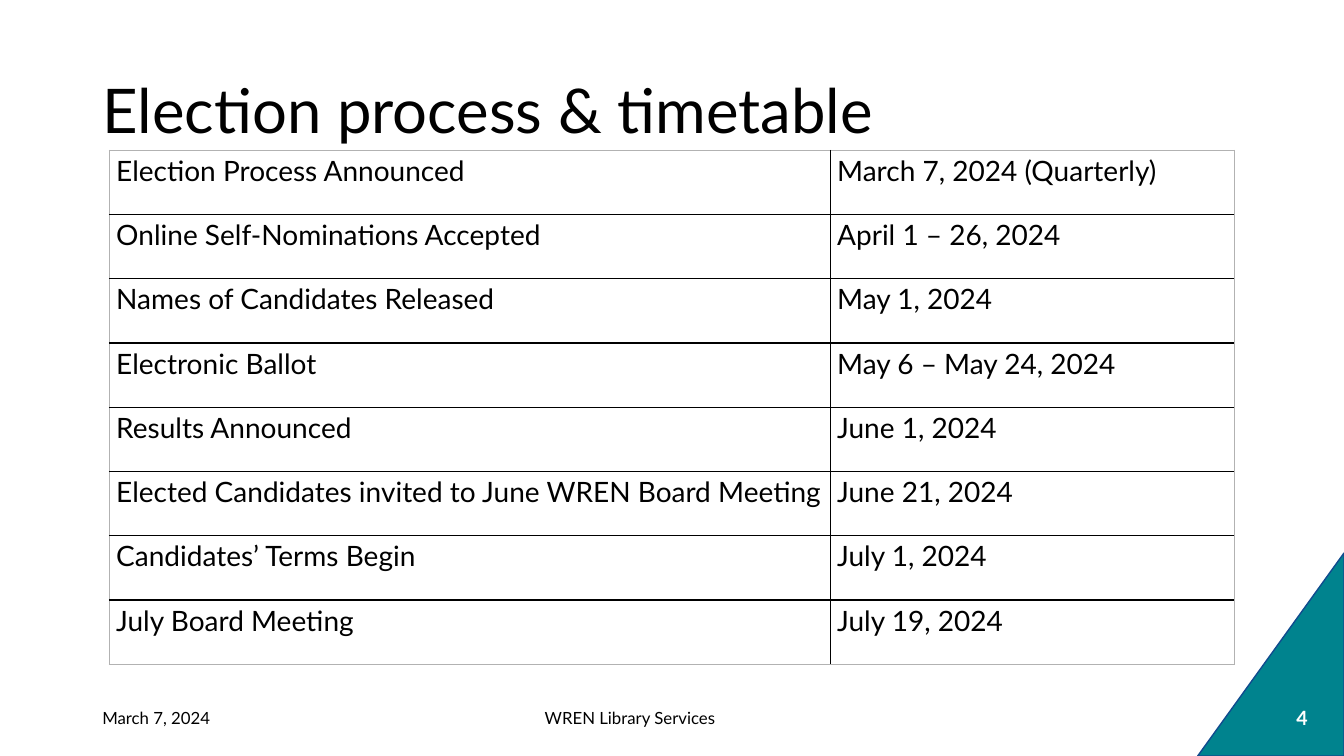
from lxml import etree
from pptx import Presentation
from pptx import util as u
from pptx.dml.color import RGBColor
from pptx.enum import shapes, text
from pptx.oxml import ns

BLACK = RGBColor(0x00, 0x00, 0x00)
WHITE = RGBColor(0xFF, 0xFF, 0xFF)
TEAL = RGBColor(0x00, 0x83, 0x8E)
NAVY = RGBColor(0x10, 0x4B, 0x8E)
GREY = RGBColor(0xB2, 0xB2, 0xB2)
FONT = "Lato"

TIMETABLE = [
    ("Election Process Announced", "March 7, 2024 (Quarterly)"),
    ("Online Self-Nominations Accepted", "April 1 – 26, 2024"),
    ("Names of Candidates Released", "May 1, 2024"),
    ("Electronic Ballot", "May 6 – May 24, 2024"),
    ("Results Announced", "June 1, 2024"),
    ("Elected Candidates invited to June WREN Board Meeting", "June 21, 2024"),
    ("Candidates’ Terms Begin", "July 1, 2024"),
    ("July Board Meeting", "July 19, 2024"),
]


def format_text(frame, size, color=BLACK, bold=False, align=text.PP_ALIGN.LEFT, spacing=1.0):
    for paragraph in frame.paragraphs:
        paragraph.alignment = align
        paragraph.line_spacing = spacing
        for run in paragraph.runs:
            run.font.name = FONT
            run.font.size = u.Pt(size)
            run.font.bold = bold
            run.font.color.rgb = color


def add_corner(slide, left, top, width, height):
    """Right triangle filling the box, with its right angle at the bottom right."""
    # The shape is turned a quarter, so its own width is the box height
    shift = (height - width) / 2
    triangle = slide.shapes.add_shape(
        shapes.MSO_SHAPE.RIGHT_TRIANGLE,
        u.Pt(left - shift), u.Pt(top + shift), u.Pt(height), u.Pt(width))
    triangle.rotation = 270
    triangle.shadow.inherit = False
    triangle.fill.solid()
    triangle.fill.fore_color.rgb = TEAL
    triangle.line.color.rgb = NAVY
    triangle.line.width = u.Pt(1)


def add_title(slide, left, top, width, height):
    title = slide.shapes.title
    title.left, title.top = u.Pt(left), u.Pt(top)
    title.width, title.height = u.Pt(width), u.Pt(height)
    frame = title.text_frame
    frame.text = "Election process & timetable"
    frame.vertical_anchor = text.MSO_ANCHOR.MIDDLE
    format_text(frame, 44, spacing=0.9)


def add_border(cell, side, color, width):
    properties = cell._tc.get_or_add_tcPr()
    line = etree.SubElement(properties, ns.qn(f"a:ln{side}"), w=str(u.Pt(width)))
    fill = etree.SubElement(line, ns.qn("a:solidFill"))
    etree.SubElement(fill, ns.qn("a:srgbClr"), val=str(color))


def add_timetable(slide, left, top, width, height):
    row_count, column_count = len(TIMETABLE), 2
    frame = slide.shapes.add_table(
        row_count, column_count, u.Pt(left), u.Pt(top), u.Pt(width), u.Pt(height))
    table = frame.table
    table.first_row = table.horz_banding = False
    step_width = 515
    table.columns[0].width = u.Pt(step_width)
    table.columns[1].width = u.Pt(width - step_width)
    for row, entries in enumerate(TIMETABLE):
        table.rows[row].height = u.Pt(height / row_count)
        for column, entry in enumerate(entries):
            cell = table.cell(row, column)
            cell.text_frame.text = entry
            format_text(cell.text_frame, 20, spacing=1.1)
            cell.margin_left = cell.margin_right = u.Pt(5)
            cell.margin_top = cell.margin_bottom = 0
            # Pale outer frame, black inner rules
            outer = {"L": column == 0, "R": column == column_count - 1,
                     "T": row == 0, "B": row == row_count - 1}
            for side, is_outer in outer.items():
                add_border(cell, side, GREY if is_outer else BLACK, 0.5 if is_outer else 1)
            cell.fill.background()


def add_footer_text(slide, words, left, top, width, height, size=12, **style):
    box = slide.shapes.add_textbox(u.Pt(left), u.Pt(top), u.Pt(width), u.Pt(height))
    frame = box.text_frame
    frame.word_wrap = True
    frame.vertical_anchor = text.MSO_ANCHOR.MIDDLE
    frame.text = words
    format_text(frame, size, **style)


def add_footer(slide, left, top, width, height):
    center = text.PP_ALIGN.CENTER
    add_footer_text(slide, "March 7, 2024", left, top, 216, height)
    add_footer_text(slide, "WREN Library Services", left + 222, top, 324, height, align=center)
    number_width = 42
    add_footer_text(slide, "4", left + width - number_width, top, number_width, height,
                    size=14, color=WHITE, bold=True, align=center)


def main():
    presentation = Presentation()
    presentation.slide_width, presentation.slide_height = u.Pt(960), u.Pt(540)
    title_only = presentation.slide_layouts[5]
    slide = presentation.slides.add_slide(title_only)
    add_corner(slide, 855.5, 395, 104.5, 145)
    add_timetable(slide, 78, 107.3, 803.5, 367.2)
    add_title(slide, 66, 28.8, 828, 104.4)
    add_footer(slide, 66, 498.5, 885, 28.8)
    presentation.save("out.pptx")


if __name__ == "__main__":
    main()
